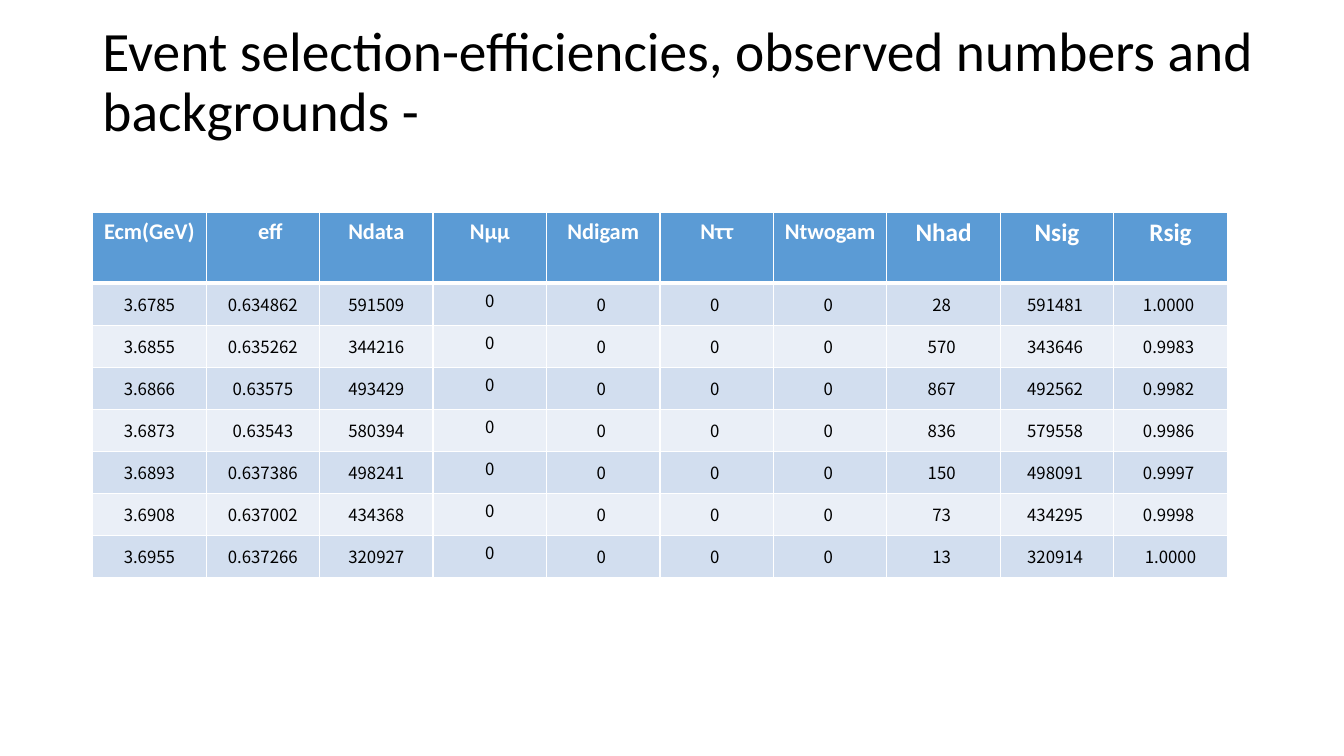
from dataclasses import dataclass

from lxml import etree
from pptx import Presentation
from pptx.dml.color import RGBColor
from pptx.enum.text import MSO_ANCHOR, MSO_AUTO_SIZE, PP_ALIGN
from pptx.oxml.ns import qn
from pptx.util import Pt

TOP, MIDDLE = MSO_ANCHOR.TOP, MSO_ANCHOR.MIDDLE
LEFT, CENTER = PP_ALIGN.LEFT, PP_ALIGN.CENTER
NO_AUTOFIT = MSO_AUTO_SIZE.NONE
TITLE_ONLY = 5


@dataclass(frozen=True)
class Theme:
    black: str = "000000"
    white: str = "FFFFFF"
    header: str = "5B9BD5"
    bands: tuple = ("D2DEEF", "EAEFF7")
    heading_font: str = "Calibri"
    body_font: str = "Noto Sans CJK SC"
    title_size: float = 39.6
    header_size: float = 16
    large_header_size: float = 18
    body_size: float = 12
    border: float = 1
    header_rule: float = 3


THEME = Theme()
TITLE = "Event selection-efficiencies, observed numbers and backgrounds -"
TITLE_BOX = (66, 28.8, 891.4, 104.4)
TABLE_BOX = (66.2, 152, 810.7, 260.4)
HEADER_HEIGHT = 50.4

HEADERS = ("Ecm(GeV)", "eff", "Ndata", "Nμμ", "Ndigam",
           "Nττ", "Ntwogam", "Nhad", "Nsig", "Rsig")
LARGE_HEADERS = ("Nhad", "Nsig", "Rsig")
EFF_INDENT = 18
MUON_COLUMN = HEADERS.index("Nμμ")

# Energy, efficiency, data | hadrons, signal, ratio
MEASUREMENTS = (
    ("3.6785", "0.634862", "591509", "28 ", "591481 ", "1.0000 "),
    ("3.6855", "0.635262", "344216", "570 ", "343646 ", "0.9983 "),
    ("3.6866", "0.63575", "493429", "867 ", "492562 ", "0.9982 "),
    ("3.6873", "0.63543", "580394", "836 ", "579558 ", "0.9986 "),
    ("3.6893", "0.637386", "498241", "150 ", "498091 ", "0.9997 "),
    ("3.6908", "0.637002", "434368", "73 ", "434295 ", "0.9998 "),
    ("3.6955", "0.637266", "320927", "13 ", "320914 ", "1.0000"),
)
BACKGROUNDS = ("0", "0 ", "0 ", "0 ")


def set_attributes(target, values):
    for name, value in values.items():
        setattr(target, name, value)


def write_text(text_frame, text, font, size, color, bold=False, alignment=CENTER):
    paragraph = text_frame.paragraphs[0]
    paragraph.alignment = alignment
    run = paragraph.add_run()
    run.text = text
    set_attributes(run.font, {"name": font, "size": Pt(size), "bold": bold})
    run.font.color.rgb = RGBColor.from_string(color)
    return paragraph


def set_borders(cell, widths):
    """Draw white borders; widths maps a side (L, R, T, B) to points."""
    properties = cell._tc.get_or_add_tcPr()
    for index, (side, width) in enumerate(widths.items()):
        line = etree.Element(qn(f"a:ln{side}"), w=str(Pt(width)))
        fill = etree.SubElement(line, qn("a:solidFill"))
        etree.SubElement(fill, qn("a:srgbClr"), val=THEME.white)
        properties.insert(index, line)


def format_cell(cell, fill, top_rule, bottom_rule):
    cell.fill.solid()
    cell.fill.fore_color.rgb = RGBColor.from_string(fill)
    set_borders(cell, {"L": THEME.border, "R": THEME.border,
                       "T": top_rule, "B": bottom_rule})


def add_title(slide, box):
    left, top, width, height = map(Pt, box)
    title = slide.shapes.title
    set_attributes(title, {"left": left, "top": top, "width": width, "height": height})
    # The deep bottom inset lifts the two lines above the box centre
    set_attributes(title.text_frame, {
        "word_wrap": True, "auto_size": NO_AUTOFIT, "vertical_anchor": MIDDLE,
        "margin_left": Pt(7.2), "margin_right": Pt(7.2),
        "margin_top": Pt(3.6), "margin_bottom": Pt(46.8)})
    paragraph = write_text(title.text_frame, TITLE, THEME.heading_font,
                           THEME.title_size, THEME.black, alignment=LEFT)
    paragraph.line_spacing = 0.9


def add_header_row(table):
    for column, label in enumerate(HEADERS):
        cell = table.cell(0, column)
        size = THEME.large_header_size if label in LARGE_HEADERS else THEME.header_size
        format_cell(cell, THEME.header, THEME.border, THEME.header_rule)
        cell.vertical_anchor = TOP
        if label == "eff":
            cell.margin_left = Pt(EFF_INDENT)
        write_text(cell.text_frame, label, THEME.heading_font, size,
                   THEME.white, bold=True)


def add_body_row(table, row, values):
    top_rule = THEME.header_rule if row == 1 else THEME.border
    centred = {"vertical_anchor": MIDDLE, "margin_left": 0, "margin_right": 0,
               "margin_top": 0, "margin_bottom": 0}
    for column, value in enumerate(values):
        cell = table.cell(row, column)
        format_cell(cell, THEME.bands[(row - 1) % 2], top_rule, THEME.border)
        set_attributes(cell, {"vertical_anchor": TOP} if column == MUON_COLUMN else centred)
        write_text(cell.text_frame, value, THEME.body_font, THEME.body_size, THEME.black)


def add_results_table(slide, box):
    left, top, width, height = box
    row_count = len(MEASUREMENTS) + 1
    table = slide.shapes.add_table(row_count, len(HEADERS), *map(Pt, box)).table
    for column in table.columns:
        column.width = Pt(width / len(HEADERS))
    for row in table.rows:
        row.height = Pt((height - HEADER_HEIGHT) / len(MEASUREMENTS))
    table.rows[0].height = Pt(HEADER_HEIGHT)

    add_header_row(table)
    for row, measurement in enumerate(MEASUREMENTS, start=1):
        add_body_row(table, row, measurement[:3] + BACKGROUNDS + measurement[3:])


def main():
    presentation = Presentation()
    set_attributes(presentation, {"slide_width": Pt(960), "slide_height": Pt(540)})
    slide = presentation.slides.add_slide(presentation.slide_layouts[TITLE_ONLY])
    add_title(slide, TITLE_BOX)
    add_results_table(slide, TABLE_BOX)
    presentation.save("out.pptx")


if __name__ == "__main__":
    main()
